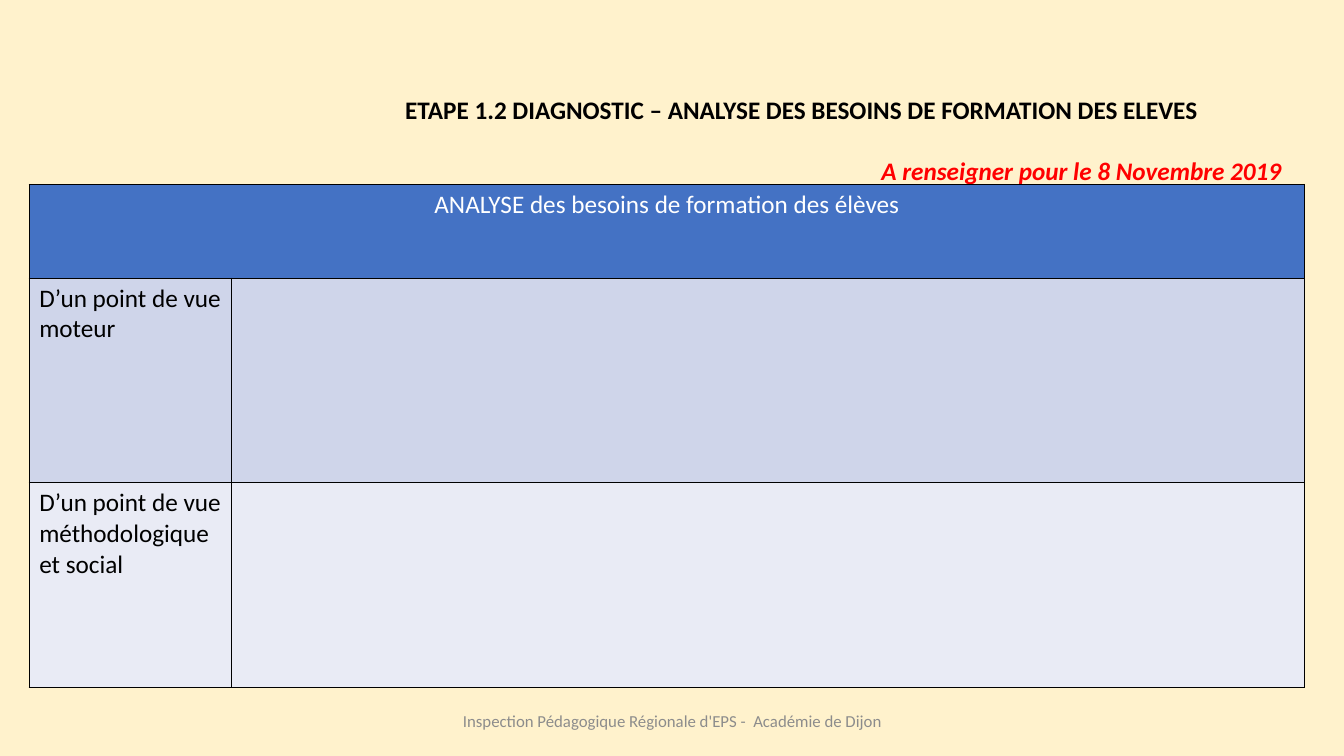
from dataclasses import dataclass
from typing import Any

from pptx import Presentation
from pptx import util as u
from pptx.dml.color import RGBColor
from pptx.enum import text as t
from pptx.oxml import parse_xml
from pptx.oxml.ns import nsdecls


@dataclass(frozen=True)
class Theme:
    font: str = "Calibri"
    body: int = 18
    small: int = 12
    background: str = "FFF2CC"
    ink: str = "000000"
    alert: str = "FF0000"
    muted: str = "8C8C8C"
    heading: str = "FFFFFF"
    heading_fill: str = "4472C4"
    band_dark: str = "CFD5EA"
    band_light: str = "E9EBF5"


THEME = Theme()
LEFT, CENTER, RIGHT = t.PP_ALIGN.LEFT, t.PP_ALIGN.CENTER, t.PP_ALIGN.RIGHT


@dataclass(frozen=True)
class Line:
    words: str
    color: str = THEME.ink
    size: int = THEME.body
    align: Any = LEFT
    bold: bool = False
    italic: bool = False
    before: int = 0


@dataclass(frozen=True)
class Block:
    box: tuple[float, float, float, float]
    lines: tuple[Line, ...]
    anchor: Any = t.MSO_ANCHOR.TOP


@dataclass(frozen=True)
class Row:
    label: Line
    fill: str
    height: float
    merged: bool = False


BLOCKS = (
    Block((3.92, 0.89, 8.89, 1.62), (
        Line("ETAPE 1.2 DIAGNOSTIC – ANALYSE DES BESOINS DE FORMATION DES ELEVES",
             bold=True),
        Line("A renseigner pour le 8 Novembre 2019", THEME.alert, align=RIGHT,
             bold=True, italic=True, before=22),
    )),
    Block((4.42, 6.95, 4.5, 0.4), (
        Line("Inspection Pédagogique Régionale d'EPS -  Académie de Dijon",
             THEME.muted, THEME.small, CENTER),
    ), t.MSO_ANCHOR.MIDDLE),
)

COLUMNS = (2.01, 10.64)
ROWS = (
    Row(Line("ANALYSE des besoins de formation des élèves", THEME.heading, align=CENTER),
        THEME.heading_fill, 0.93, merged=True),
    Row(Line("D’un point de vue moteur"), THEME.band_dark, 2.03),
    Row(Line("D’un point de vue méthodologique et social"), THEME.band_light, 2.03),
)


def write_line(paragraph: Any, line: Line) -> None:
    paragraph.alignment = line.align
    paragraph.space_before = u.Pt(line.before)
    run = paragraph.add_run()
    run.text = line.words
    formats = {"name": THEME.font, "size": u.Pt(line.size),
               "bold": line.bold, "italic": line.italic}
    for attribute, value in formats.items():
        setattr(run.font, attribute, value)
    run.font.color.rgb = RGBColor.from_string(line.color)


def draw_block(slide: Any, block: Block) -> None:
    frame = slide.shapes.add_textbox(*map(u.Inches, block.box)).text_frame
    formats = {"word_wrap": True, "auto_size": t.MSO_AUTO_SIZE.NONE,
               "vertical_anchor": block.anchor}
    for attribute, value in formats.items():
        setattr(frame, attribute, value)
    for index, line in enumerate(block.lines):
        write_line(frame.add_paragraph() if index else frame.paragraphs[0], line)


def style_cell(cell: Any, fill: str) -> None:
    properties = cell._tc.get_or_add_tcPr()
    for side in "LRTB":
        properties.append(parse_xml(
            f'<a:ln{side} {nsdecls("a")} w="{u.Pt(1)}"><a:solidFill>'
            f'<a:srgbClr val="{THEME.ink}"/></a:solidFill></a:ln{side}>'))
    cell.fill.solid()
    cell.fill.fore_color.rgb = RGBColor.from_string(fill)


def draw_needs_table(slide: Any, left: float, top: float) -> None:
    height = sum(row.height for row in ROWS)
    needs = slide.shapes.add_table(
        len(ROWS), len(COLUMNS),
        *map(u.Inches, (left, top, sum(COLUMNS), height))).table
    for column, width in zip(needs.columns, COLUMNS):
        column.width = u.Inches(width)
    for index, row in enumerate(ROWS):
        needs.rows[index].height = u.Inches(row.height)
        label = needs.cell(index, 0)
        if row.merged:
            label.merge(needs.cell(index, len(COLUMNS) - 1))
        for cell in needs.rows[index].cells:
            style_cell(cell, row.fill)
        write_line(label.text_frame.paragraphs[0], row.label)


def main() -> None:
    deck = Presentation()
    deck.slide_width, deck.slide_height = u.Inches(13.33), u.Inches(7.5)
    slide = deck.slides.add_slide(deck.slide_layouts[6])
    slide.background.fill.solid()
    slide.background.fill.fore_color.rgb = RGBColor.from_string(THEME.background)
    for block in BLOCKS:
        draw_block(slide, block)
    draw_needs_table(slide, 0.29, 1.83)
    deck.save("out.pptx")


if __name__ == "__main__":
    main()
